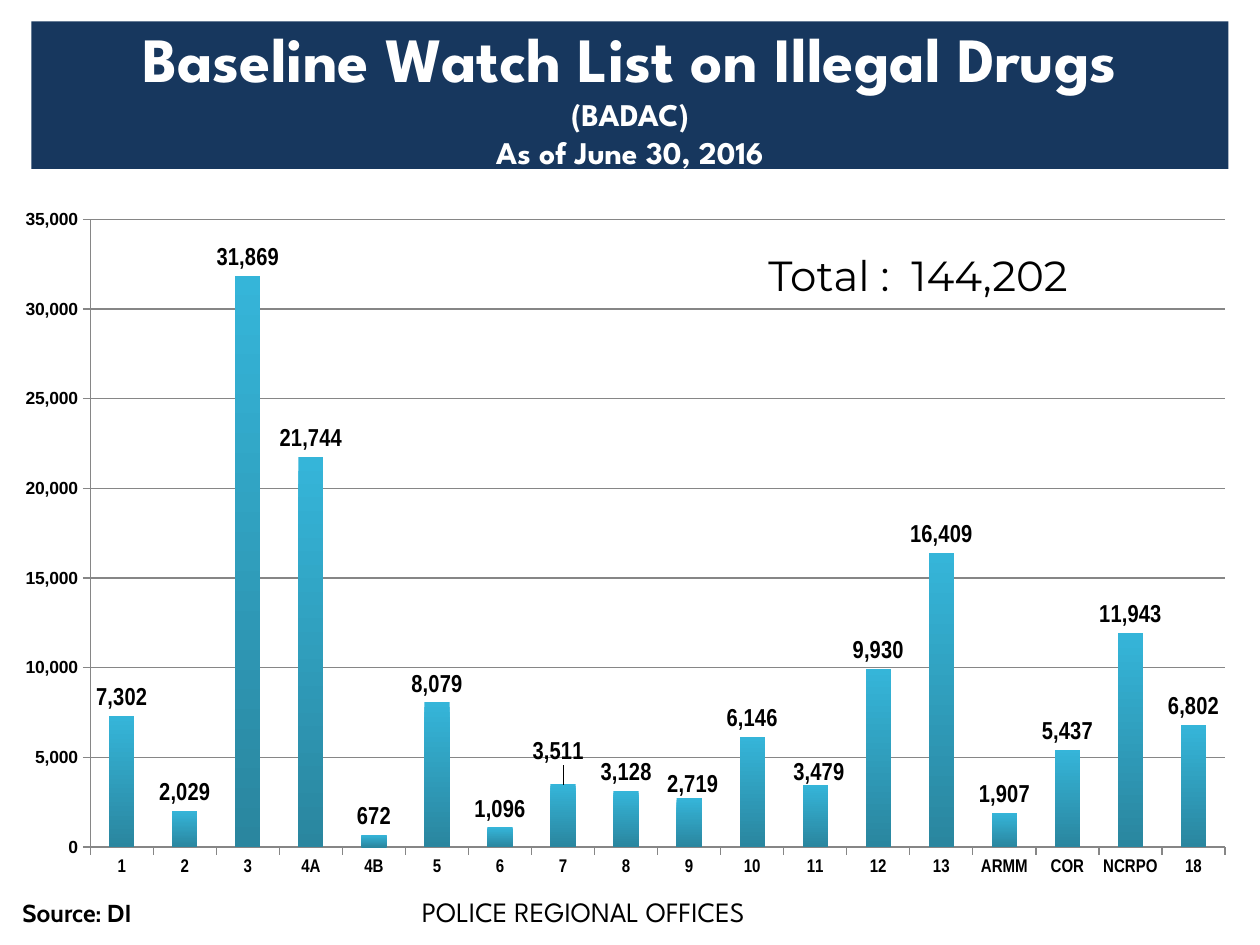
from dataclasses import dataclass

from lxml import etree
from pptx import Presentation
from pptx.chart.data import CategoryChartData
from pptx.dml.color import RGBColor
from pptx.enum import chart as charts, shapes, text
from pptx.oxml import ns
from pptx.util import Inches, Pt


@dataclass(frozen=True)
class Theme:
    navy: str = "17375E"
    white: str = "FFFFFF"
    black: str = "000000"
    grid: str = "868686"
    bar_top: str = "35B5D9"
    bar_bottom: str = "2A869F"
    heading: str = "League Spartan"
    source: str = "Cabin"
    total: str = "Montserrat"
    chart: str = "Arial"
    narrow: str = "Arial Narrow"
    title_size: float = 36
    subtitle_size: float = 18
    total_size: float = 24
    caption_size: float = 16
    note_size: float = 14
    category_size: float = 10.5
    value_size: float = 10


THEME = Theme()

OFFICES = {
    "1": 7302, "2": 2029, "3": 31869, "4A": 21744, "4B": 672, "5": 8079,
    "6": 1096, "7": 3511, "8": 3128, "9": 2719, "10": 6146, "11": 3479,
    "12": 9930, "13": 16409, "ARMM": 1907, "COR": 5437, "NCRPO": 11943,
    "18": 6802,
}
# Labels moved off their default place, as shares of the chart's size
LABEL_SHIFTS = {"7": (-0.004, -0.02), "9": (0.003, 0.006), "11": (0.003, 0.009)}
PLOT_AREA = {"x": 0.065, "y": 0.045, "w": 0.92, "h": 0.893}
NUMBER_FORMAT = "#,##0"


def set_all(target, values):
    for name, value in values.items():
        setattr(target, name, value)


def style_font(font, name, size, color=THEME.black, bold=False):
    set_all(font, {"name": name, "size": Pt(size), "bold": bold})
    font.color.rgb = RGBColor.from_string(color)


def manual_layout(values, inner=False):
    """Return a c:layout element with the given placement."""
    layout = etree.Element(ns.qn("c:layout"))
    manual = etree.SubElement(layout, ns.qn("c:manualLayout"))
    settings = {"layoutTarget": "inner", "xMode": "edge", "yMode": "edge"} if inner else {}
    for tag, value in {**settings, **values}.items():
        etree.SubElement(manual, ns.qn(f"c:{tag}")).set("val", str(value))
    return layout


def add_banner(page, box):
    banner = page.shapes.add_shape(shapes.MSO_SHAPE.RECTANGLE, *map(Inches, box))
    banner.shadow.inherit = False
    banner.fill.solid()
    banner.fill.fore_color.rgb = RGBColor.from_string(THEME.navy)
    banner.line.fill.background()
    frame = banner.text_frame
    set_all(frame, {"word_wrap": True, "vertical_anchor": text.MSO_ANCHOR.MIDDLE})
    lines = [
        ("Baseline Watch List on Illegal Drugs", THEME.title_size),
        ("(BADAC)", THEME.subtitle_size),
        ("As of June 30, 2016", THEME.subtitle_size),
    ]
    for number, (words, size) in enumerate(lines):
        para = frame.add_paragraph() if number else frame.paragraphs[0]
        para.alignment = text.PP_ALIGN.CENTER
        span = para.add_run()
        span.text = words
        style_font(span.font, THEME.heading, size, THEME.white, True)


def add_note(page, box, words, font, size, bold=False):
    frame = page.shapes.add_textbox(*map(Inches, box)).text_frame
    set_all(frame, {"word_wrap": True, "auto_size": text.MSO_AUTO_SIZE.SHAPE_TO_FIT_TEXT})
    span = frame.paragraphs[0].add_run()
    span.text = words
    style_font(span.font, font, size, bold=bold)


def style_axes(chart):
    grid_color = RGBColor.from_string(THEME.grid)
    values, categories = chart.value_axis, chart.category_axis
    set_all(values, {"minimum_scale": 0, "maximum_scale": 35000,
                     "major_unit": 5000, "has_major_gridlines": True})
    set_all(values.tick_labels, {"number_format": NUMBER_FORMAT,
                                 "number_format_is_linked": False})
    style_font(values.tick_labels.font, THEME.chart, THEME.value_size, bold=True)
    style_font(categories.tick_labels.font, THEME.narrow, THEME.category_size, bold=True)
    for axis in (values, categories):
        axis.major_tick_mark = charts.XL_TICK_MARK.OUTSIDE
    for line in (values.major_gridlines.format.line, values.format.line,
                 categories.format.line):
        line.width = Pt(0.75)
        line.color.rgb = grid_color


def style_bars(plot):
    set_all(plot, {"gap_width": 150, "vary_by_categories": False,
                   "has_data_labels": True})
    series = plot.series[0]
    fill = series.format.fill
    fill.gradient()
    fill.gradient_angle = 270
    for stop, color in zip(fill.gradient_stops, (THEME.bar_top, THEME.bar_bottom)):
        stop.color.rgb = RGBColor.from_string(color)

    outside = charts.XL_LABEL_POSITION.OUTSIDE_END
    labels = series.data_labels
    set_all(labels, {"show_value": True, "number_format": NUMBER_FORMAT,
                     "number_format_is_linked": False, "position": outside})
    style_font(labels.font, THEME.narrow, THEME.note_size, bold=True)

    offices = list(OFFICES)
    for office, (across, down) in LABEL_SHIFTS.items():
        index = offices.index(office)
        label = series.points[index].data_label
        style_font(label.font, THEME.narrow, THEME.note_size, bold=True)
        label.position = outside
        # The layout follows the index in the label's XML
        for mark in labels._element.findall(ns.qn("c:dLbl")):
            position = mark.find(ns.qn("c:idx"))
            if position.get("val") == str(index):
                position.addnext(manual_layout({"x": across, "y": down}))


def add_office_chart(page, box):
    data = CategoryChartData(number_format=NUMBER_FORMAT)
    data.categories = list(OFFICES)
    data.add_series("Series 1", list(OFFICES.values()))
    chart = page.shapes.add_chart(charts.XL_CHART_TYPE.COLUMN_CLUSTERED,
                                  *map(Inches, box), data).chart
    set_all(chart, {"has_legend": False, "has_title": False})
    style_font(chart.font, THEME.chart, THEME.subtitle_size)
    style_axes(chart)
    style_bars(chart.plots[0])
    area = chart._chartSpace.find(".//" + ns.qn("c:plotArea"))
    for old in area.findall(ns.qn("c:layout")):
        area.remove(old)
    area.insert(0, manual_layout(PLOT_AREA, inner=True))


def main():
    deck = Presentation()
    set_all(deck, {"slide_width": Inches(10), "slide_height": Inches(7.5)})
    page = deck.slides.add_slide(deck.slide_layouts[6])

    # Heading
    add_banner(page, (0.25, 0.17, 9.5, 1.17))
    # Chart
    add_office_chart(page, (0.08, 1.49, 9.79, 5.58))
    # Notes on and below the chart
    add_note(page, (0.08, 7.08, 1.35, 0.34), "Source: DI",
             THEME.source, THEME.note_size, bold=True)
    add_note(page, (3.25, 7.05, 4.5, 0.37), "POLICE REGIONAL OFFICES",
             THEME.heading, THEME.caption_size)
    add_note(page, (6, 1.93, 3.17, 0.51), "Total :  144,202",
             THEME.total, THEME.total_size)

    deck.save("out.pptx")


if __name__ == "__main__":
    main()
